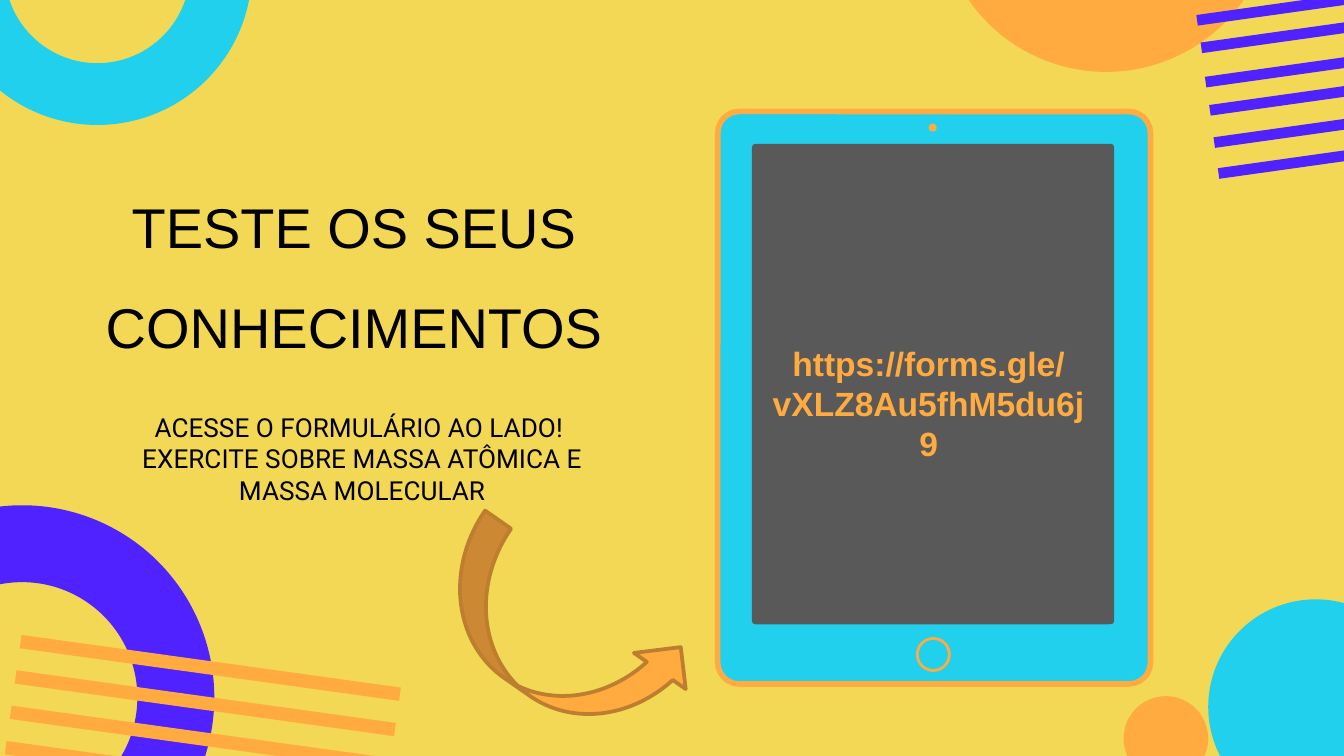
from typing import NamedTuple, Optional

from lxml import etree
from pptx import Presentation
from pptx import util as u
from pptx.dml.color import RGBColor
from pptx.enum import shapes, text
from pptx.oxml.ns import qn

COLUMNS, ROWS = 100, 56.25  # square grid cells
CELL = u.Inches(0.1)
COLORS = {
    "background": "F2D855",
    "orange": "FFAB40",
    "brown": "BD7F2F",
    "cyan": "20D0ED",
    "purple": "4F22FF",
    "screen": "595959",
    "black": "000000",
}
KIND = shapes.MSO_SHAPE


class Box(NamedTuple):
    column: float
    row: float
    columns: float
    rows: float


class Figure(NamedTuple):
    kind: shapes.MSO_SHAPE
    box: Box
    fill: str
    adjustment: Optional[float] = None
    rotation: float = 0
    line: Optional[str] = None
    line_width: float = 0


class Stripes(NamedTuple):
    centers: list[tuple[float, float]]
    length: float
    thickness: float
    rotation: float
    fill: str


def cells(count: float) -> u.Emu:
    return u.Emu(round(count * CELL))


def color(name: str) -> RGBColor:
    return RGBColor.from_string(COLORS[name])


def around(x: float, y: float, width: float, height: float) -> Box:
    """Box of the given size centred on a grid point."""
    return Box(x - width / 2, y - height / 2, width, height)


def draw(slide, figure: Figure) -> None:
    shape = slide.shapes.add_shape(figure.kind, *map(cells, figure.box))
    shape.shadow.inherit = False
    shape.rotation = figure.rotation
    shape.fill.solid()
    shape.fill.fore_color.rgb = color(figure.fill)
    if figure.adjustment is not None:
        shape.adjustments[0] = figure.adjustment
    if figure.line:
        shape.line.color.rgb = color(figure.line)
        shape.line.width = u.Pt(figure.line_width)
    else:
        shape.line.fill.background()


def draw_stripes(slide, stripes: Stripes) -> None:
    for x, y in stripes.centers:
        box = around(x, y, stripes.length, stripes.thickness)
        draw(slide, Figure(KIND.RECTANGLE, box, stripes.fill, rotation=stripes.rotation))


def write(holder, box: Box, lines: list[str], *, size: float, font: str, fill: str,
          bold: bool = False, spacing: float = 1, inset: float = 1) -> None:
    """Place a text holder and fill it with centred, unbulleted paragraphs."""
    holder.left, holder.top, holder.width, holder.height = map(cells, box)
    frame = holder.text_frame
    frame.word_wrap = True
    frame.auto_size = text.MSO_AUTO_SIZE.NONE
    frame.vertical_anchor = text.MSO_ANCHOR.TOP
    frame.margin_left = frame.margin_right = u.Inches(0.1)
    frame.margin_top = frame.margin_bottom = cells(inset)
    frame.text = "\n".join(lines)
    for paragraph in frame.paragraphs:
        paragraph.alignment = text.PP_ALIGN.CENTER
        paragraph.line_spacing = spacing
        paragraph.space_before = u.Pt(0)
        properties = paragraph._p.get_or_add_pPr()
        properties.set("marL", "0")
        properties.set("indent", "0")
        etree.SubElement(properties, qn("a:buNone"))
        for run in paragraph.runs:
            run.font.name = font
            run.font.size = u.Pt(size)
            run.font.bold = bold
            run.font.color.rgb = color(fill)


PURPLE_RING = Figure(KIND.DONUT, around(1.65, 51.9, 28.6, 28.6), "purple", 0.2)
ORANGE_STRIPES = Stripes(
    [(15.65 - 0.37 * i, 49.7 + 2.63 * i) for i in range(4)], 28.5, 1, 7.9, "orange")
CORNER_CIRCLES = [
    Figure(KIND.DONUT, around(7.25, -2.2, 23, 23), "cyan", 0.2),
    Figure(KIND.OVAL, around(82.3, -7.1, 24.9, 24.9), "orange"),
    Figure(KIND.OVAL, around(97.9, 52.6, 16, 16), "cyan"),
    Figure(KIND.OVAL, around(86.75, 54.95, 6.3, 6.3), "orange"),
]
PURPLE_STRIPES = Stripes(
    [(101.25 + 0.32 * i, y) for i, y in enumerate([-0.2, 1.85, 4.4, 6.5, 8.9, 11.2])],
    24.6, 0.8, -8, "purple")
TABLET = [
    Figure(KIND.ROUNDED_RECTANGLE, Box(53.4, 8.3, 32.2, 42.6), "cyan", 0.05,
           line="orange", line_width=3),
    Figure(KIND.ROUNDED_RECTANGLE, Box(55.95, 10.7, 26.95, 35.75), "screen", 0.01),
    Figure(KIND.OVAL, around(69.4, 9.5, 0.6, 0.6), "orange"),
    Figure(KIND.DONUT, around(69.45, 48.7, 2.6, 2.6), "orange", 0.08),
]
ARROW = Figure(KIND.CURVED_UP_ARROW, Box(31.6, 42.9, 20.1, 9.4), "orange",
               rotation=34.9, line="brown", line_width=2)


def main() -> None:
    deck = Presentation()
    deck.slide_width, deck.slide_height = cells(COLUMNS), cells(ROWS)
    slide = deck.slides.add_slide(deck.slide_layouts[1])
    slide.background.fill.solid()
    slide.background.fill.fore_color.rgb = color("background")

    draw(slide, PURPLE_RING)
    draw_stripes(slide, ORANGE_STRIPES)
    for circle in CORNER_CIRCLES:
        draw(slide, circle)
    draw_stripes(slide, PURPLE_STRIPES)

    write(slide.shapes.title, Box(1.15, 10.8, 50.4, 5.4), ["TESTE OS SEUS CONHECIMENTOS"],
          size=30, font="Arial", fill="black", spacing=1.5)
    write(slide.placeholders[1], Box(7.9, 29.6, 38.1, 15.8),
          ["ACESSE O FORMULÁRIO AO LADO! ",
           "EXERCITE SOBRE MASSA ATÔMICA E MASSA MOLECULAR"],
          size=14, font="Roboto", fill="black")

    for part in TABLET:
        draw(slide, part)
    address_box = Box(56.1, 25, 26, 7.1)
    address = slide.shapes.add_textbox(*map(cells, address_box))
    write(address, address_box, ["https://forms.gle/vXLZ8Au5fhM5du6j9"],
          size=18, font="Arial", fill="orange", bold=True, inset=0.5)
    draw(slide, ARROW)
    deck.save("out.pptx")


if __name__ == "__main__":
    main()
